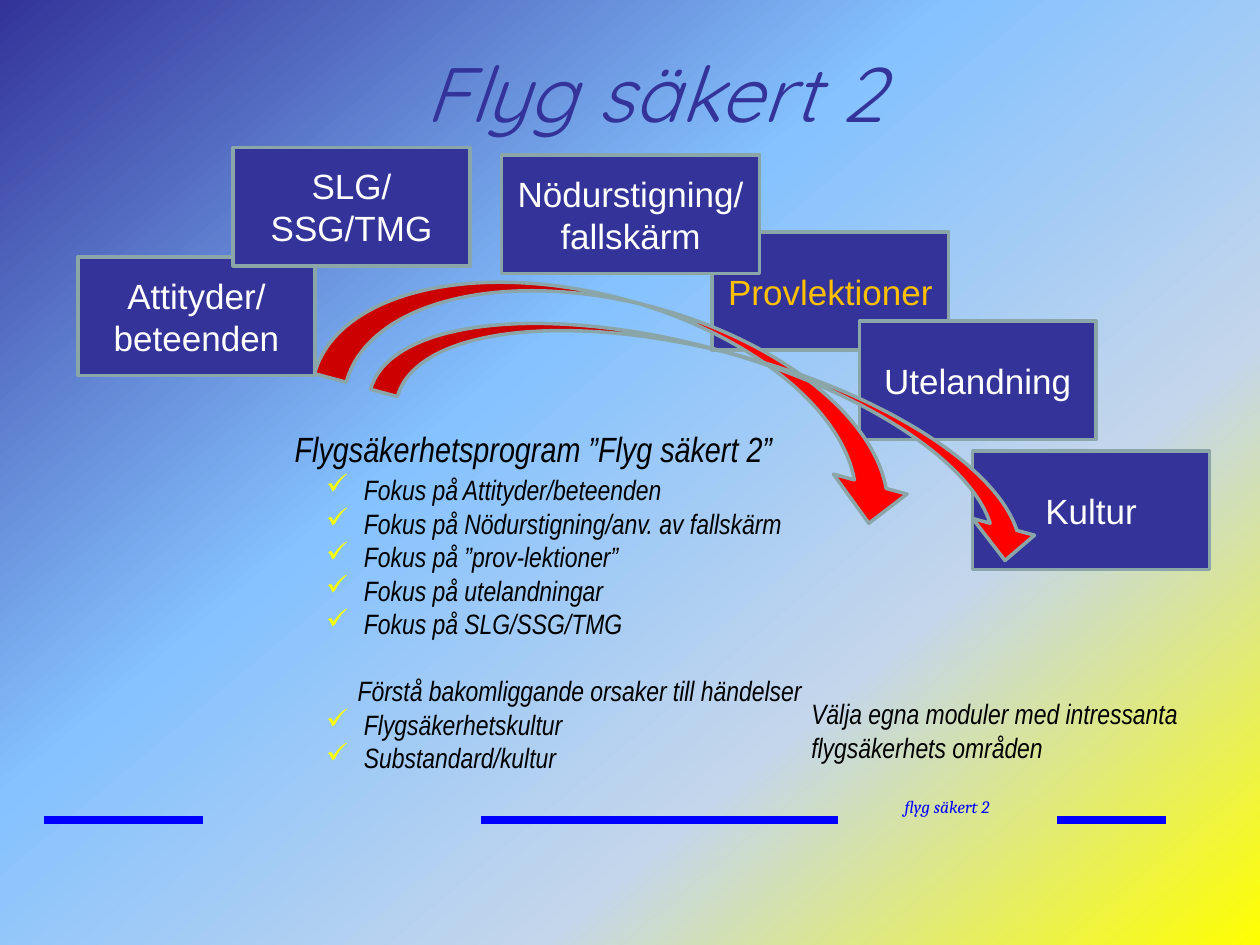
from lxml import etree
from pptx import Presentation
from pptx.dml.color import RGBColor
from pptx.enum.shapes import MSO_CONNECTOR, MSO_SHAPE
from pptx.enum.text import MSO_ANCHOR, MSO_AUTO_SIZE, PP_ALIGN
from pptx.oxml.ns import qn
from pptx.util import Inches, Pt

COLORS = {
    "navy": "333399", "sky": "85C2FF", "mist": "C4D6EB", "yellow": "FFFF00",
    "blue": "0000FF", "edge": "8AA6A8", "red": "FF0000",
    "white": "FFFFFF", "amber": "FFC000", "black": "000000",
}
STOPS = [(0, "navy"), (40, "sky"), (70, "mist"), (100, "yellow")]
RULES = [(0.35, 1.61), (3.82, 6.65), (8.39, 9.25)]
FOCUS = [
    "Fokus på Attityder/beteenden",
    "Fokus på Nödurstigning/anv. av fallskärm",
    "Fokus på ”prov-lektioner”",
    "Fokus på utelandningar",
    "Fokus på SLG/SSG/TMG",
]
CAUSES = ["Flygsäkerhetskultur", "Substandard/kultur"]


def rgb(name):
    return RGBColor.from_string(COLORS[name])


def add_back(slide):
    fill = slide.background.fill
    fill.gradient()
    grad = slide.background._cSld.find(".//" + qn("a:gradFill"))
    stops = grad.find(qn("a:gsLst"))
    for old in list(stops):
        stops.remove(old)
    for pos, name in STOPS:
        stop = etree.SubElement(stops, qn("a:gs"), pos=str(pos * 1000))
        etree.SubElement(stop, qn("a:srgbClr"), val=COLORS[name])
    # Clockwise angle in 60000ths of a degree
    grad.find(qn("a:lin")).set("ang", str(50 * 60000))


def add_rule(slide, left, right):
    y = Inches(6.51)
    rule = slide.shapes.add_connector(
        MSO_CONNECTOR.STRAIGHT, Inches(left), y, Inches(right), y)
    rule.line.color.rgb = rgb("blue")
    rule.line.width = Pt(4.5)
    etree.SubElement(rule._element.spPr, qn("a:effectLst"))


def add_run(para, text, size, face, color, italic=True):
    run = para.add_run()
    run.text = text
    font = run.font
    font.size, font.name, font.italic = Pt(size), face, italic
    font.color.rgb = rgb(color)


def add_frame(slide, at, wrap=False):
    frame = slide.shapes.add_textbox(*map(Inches, at)).text_frame
    frame.word_wrap = wrap
    frame.auto_size = MSO_AUTO_SIZE.SHAPE_TO_FIT_TEXT
    return frame


def add_label(slide, at, text, size, face, color, wrap=False):
    para = add_frame(slide, at, wrap).paragraphs[0]
    add_run(para, text, size, face, color)
    return para


def add_shape(slide, kind, at, fill):
    shape = slide.shapes.add_shape(kind, *map(Inches, at))
    shape.shadow.inherit = False
    shape.fill.solid()
    shape.fill.fore_color.rgb = rgb(fill)
    shape.line.color.rgb = rgb("edge")
    shape.line.width = Pt(2)
    return shape


def add_card(slide, left, top, lines, color="white", width=1.88):
    at = (left, top, width, 0.94)
    frame = add_shape(slide, MSO_SHAPE.RECTANGLE, at, "navy").text_frame
    frame.vertical_anchor = MSO_ANCHOR.MIDDLE
    for i, line in enumerate(lines):
        para = frame.add_paragraph() if i else frame.paragraphs[0]
        para.alignment = PP_ALIGN.CENTER
        add_run(para, line, 20, "Arial", color, False)


def add_arc(slide, at):
    arc = add_shape(slide, MSO_SHAPE.CURVED_DOWN_ARROW, at, "red")
    arc.rotation = 15.1
    for i, value in enumerate((0.216, 0.5, 0.25)):
        arc.adjustments[i] = value


def set_indent(para, left, hang=0):
    props = para._p.get_or_add_pPr()
    props.set("marL", str(Inches(left)))
    props.set("indent", str(-Inches(hang)))
    return props


def add_item(frame, text):
    para = frame.add_paragraph()
    props = set_indent(para, 0.55, 0.3)
    tint = etree.SubElement(props, qn("a:buClr"))
    etree.SubElement(tint, qn("a:srgbClr"), val=COLORS["yellow"])
    etree.SubElement(props, qn("a:buChar"), char="✓")
    add_run(para, text, 16, "Arial Narrow", "black")


def add_program(slide):
    frame = add_frame(slide, (2.24, 3.34, 4.28, 2.89))
    head = frame.paragraphs[0]
    head.space_after = Pt(2)
    add_run(head, "Flygsäkerhetsprogram ”Flyg säkert 2”", 20, "Arial Narrow", "black")
    for text in FOCUS:
        add_item(frame, text)
    para = frame.add_paragraph()
    set_indent(para, 0.5)
    para.space_before = Pt(19)
    add_run(para, "Förstå bakomliggande orsaker till händelser", 16, "Arial Narrow", "black")
    for text in CAUSES:
        add_item(frame, text)


def main():
    deck = Presentation()
    deck.slide_width, deck.slide_height = Inches(10), Inches(7.5)
    slide = deck.slides.add_slide(deck.slide_layouts[6])

    # Background, footer and title
    add_back(slide)
    for left, right in RULES:
        add_rule(slide, left, right)
    foot = add_label(slide, (6.73, 6.27, 1.57, 0.67), "flyg säkert 2", 10, "Cambria", "blue")
    foot.alignment = PP_ALIGN.CENTER
    add_label(slide, (3.28, 0.31, 4.02, 0.84), "Flyg säkert 2", 44, "Quicksand", "navy")

    # Module cards, arrows and texts, from back to front
    add_card(slide, 0.62, 2.04, ["Attityder/", "beteenden"])
    add_card(slide, 5.65, 1.84, ["Provlektioner"], "amber")
    add_card(slide, 6.82, 2.55, ["Utelandning"])
    add_card(slide, 7.72, 3.58, ["Kultur"])
    add_arc(slide, (2.57, 2.41, 4.86, 1.21))
    add_program(slide)
    add_arc(slide, (2.98, 2.8, 5.47, 1.02))
    add_card(slide, 3.98, 1.23, ["Nödurstigning/", "fallskärm"], width=2.05)
    add_label(slide, (6.34, 5.48, 3.31, 0.64),
              "Välja egna moduler med intressanta flygsäkerhets områden",
              16, "Arial Narrow", "black", wrap=True)
    add_card(slide, 1.85, 1.17, ["SLG/", "SSG/TMG"])

    deck.save("out.pptx")


if __name__ == "__main__":
    main()
